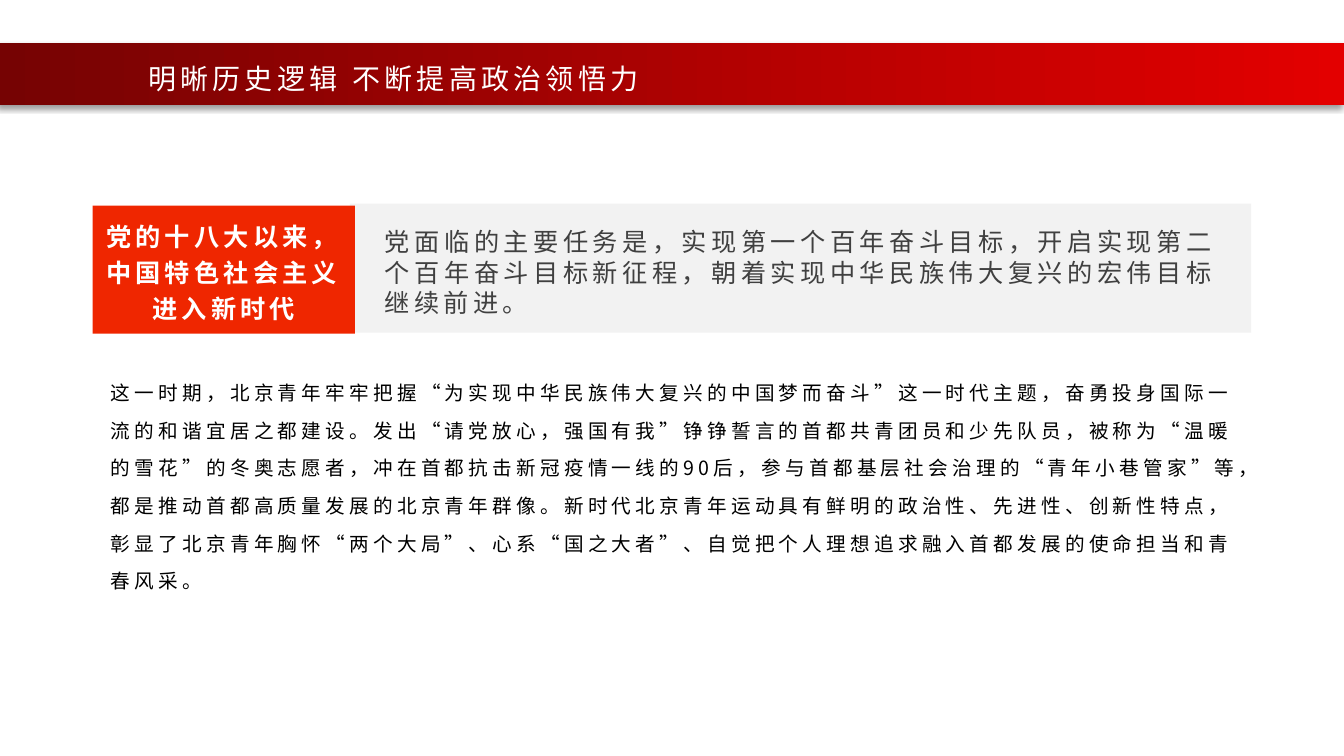
from lxml import etree
from pptx import Presentation
from pptx.dml.color import RGBColor
from pptx.enum.shapes import MSO_SHAPE
from pptx.enum.text import MSO_ANCHOR as ANCHOR, MSO_AUTO_SIZE as AUTO_SIZE, PP_ALIGN as ALIGN
from pptx.oxml import parse_xml
from pptx.oxml.ns import qn
from pptx.util import Inches, Pt

FONT = "Noto Sans CJK SC"


def color(value):
    return RGBColor.from_string(value)


def write(shape, text, size, value, align=ALIGN.LEFT, spacing=1.0, bold=False, anchor=ANCHOR.TOP):
    frame = shape.text_frame
    frame.text = text
    frame.word_wrap = True
    frame.auto_size = AUTO_SIZE.NONE
    frame.vertical_anchor = anchor
    paragraph = frame.paragraphs[0]
    paragraph.alignment = align
    paragraph.line_spacing = spacing
    paragraph.space_before = Pt(0)
    run = paragraph.runs[0]
    run.font.size = Pt(size)
    run.font.bold = bold
    run.font.color.rgb = color(value)
    run.font.name = FONT
    # Letter spacing, language and East Asian typeface
    properties = run.font._element
    properties.set("lang", "zh-CN")
    properties.set("spc", "300")
    etree.SubElement(properties, qn("a:ea")).set("typeface", FONT)


presentation = Presentation()
presentation.slide_width = Inches(13.33)
presentation.slide_height = Inches(7.5)
slide = presentation.slides.add_slide(presentation.slide_layouts[1])
shapes = slide.shapes

# Header bar with gradient and soft shadow, behind the title
bar = shapes.add_shape(MSO_SHAPE.RECTANGLE, 0, Inches(0.43), presentation.slide_width, Inches(0.61))
bar.line.fill.background()
bar.fill.gradient()
bar.fill.gradient_angle = 180
for stop, value in zip(bar.fill.gradient_stops, ("E30000", "760303")):
    stop.color.rgb = color(value)
bar._element.spPr.append(parse_xml(
    '<a:effectLst xmlns:a="http://schemas.openxmlformats.org/drawingml/2006/main">'
    '<a:outerShdw blurRad="50800" dist="38100" dir="8100000" algn="tr" rotWithShape="0">'
    '<a:srgbClr val="000000"><a:alpha val="40000"/></a:srgbClr>'
    '</a:outerShdw></a:effectLst>'))
shapes._spTree.insert(2, bar._element)

# Title
title = shapes.title
title.left, title.top, title.width, title.height = map(Inches, (1.37, 0.56, 5.85, 0.44))
write(title, "明晰历史逻辑 不断提高政治领悟力", 20, "FFFFFF")

# Grey panel and red label
panel = shapes.add_shape(MSO_SHAPE.RECTANGLE, Inches(3.47), Inches(2.02), Inches(8.94), Inches(1.28))
label = shapes.add_shape(MSO_SHAPE.RECTANGLE, Inches(0.92), Inches(2.04), Inches(2.6), Inches(1.27))
for block, value in ((panel, "F2F2F2"), (label, "EF2600")):
    block.fill.solid()
    block.fill.fore_color.rgb = color(value)
    block.line.fill.background()
    block.shadow.inherit = False
write(label, "党的十八大以来，中国特色社会主义进入新时代", 18, "FFFFFF",
      ALIGN.CENTER, 1.2, True, ANCHOR.MIDDLE)

# Main task
task = shapes.add_textbox(Inches(3.72), Inches(2.2), Inches(8.44), Inches(1.01))
write(task, "党面临的主要任务是，实现第一个百年奋斗目标，开启实现第二个百年奋斗目标新征程，"
      "朝着实现中华民族伟大复兴的宏伟目标继续前进。", 18, "404040", ALIGN.JUSTIFY)

# Body text without a bullet
body = slide.placeholders[1]
body.left, body.top, body.width, body.height = map(Inches, (1, 3.59, 11.41, 2.36))
write(body, "这一时期，北京青年牢牢把握“为实现中华民族伟大复兴的中国梦而奋斗”这一时代主题，"
      "奋勇投身国际一流的和谐宜居之都建设。发出“请党放心，强国有我”铮铮誓言的首都共青团员和少先队员，"
      "被称为“温暖的雪花”的冬奥志愿者，冲在首都抗击新冠疫情一线的90后，"
      "参与首都基层社会治理的“青年小巷管家”等，都是推动首都高质量发展的北京青年群像。"
      "新时代北京青年运动具有鲜明的政治性、先进性、创新性特点，彰显了北京青年胸怀“两个大局”、"
      "心系“国之大者”、自觉把个人理想追求融入首都发展的使命担当和青春风采。",
      14, "000000", spacing=1.6)
body_properties = body.text_frame.paragraphs[0]._p.get_or_add_pPr()
body_properties.set("marL", "0")
body_properties.set("indent", "0")
etree.SubElement(body_properties, qn("a:buNone"))

presentation.save("out.pptx")
